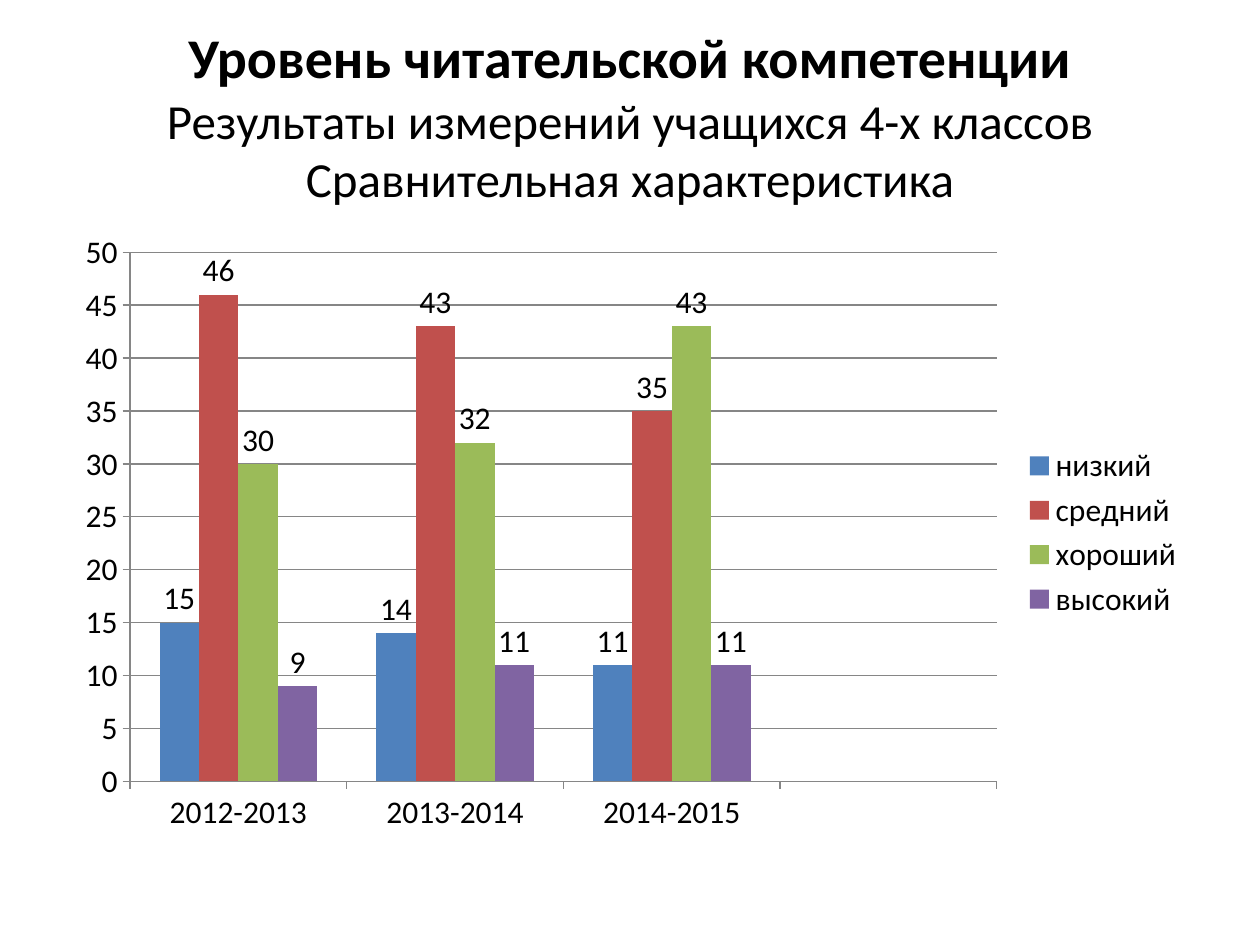
from dataclasses import dataclass

from pptx import Presentation
from pptx.chart.data import CategoryChartData
from pptx.dml.color import RGBColor
from pptx.enum.chart import XL_CHART_TYPE as ChartType
from pptx.enum.chart import XL_LABEL_POSITION as LabelPosition
from pptx.enum.chart import XL_LEGEND_POSITION as LegendPosition
from pptx.enum.chart import XL_TICK_MARK as TickMark
from pptx.enum.text import MSO_ANCHOR as Anchor
from pptx.enum.text import PP_ALIGN as Align
from pptx.util import Cm, Pt


@dataclass(frozen=True)
class Theme:
    """Colours, font and type sizes of the deck."""

    font: str = "Calibri"
    text: RGBColor = RGBColor(0, 0, 0)
    line: RGBColor = RGBColor(0x86, 0x86, 0x86)
    title_size: Pt = Pt(32)
    subtitle_size: Pt = Pt(28)
    chart_size: Pt = Pt(18)


THEME = Theme()
TITLE = "Уровень читательской компетенции"
SUBTITLES = [
    "Результаты измерений учащихся 4-х классов",
    "Сравнительная характеристика",
]
YEARS = ["2012-2013", "2013-2014", "2014-2015", ""]
LEVELS = [
    ("низкий", [15, 14, 11, None], "4F81BD"),
    ("средний", [46, 43, 35, None], "C0504D"),
    ("хороший", [30, 32, 43, None], "9BBB59"),
    ("высокий", [9, 11, 11, None], "8064A2"),
]
SMALL_LABELS = "средний"


def style_font(font, size, bold=False):
    """Apply the theme font and text colour at the given size."""
    font.name = THEME.font
    font.size = size
    font.bold = bold
    font.color.rgb = THEME.text


def add_heading(page, left, top, width, height):
    """Place the bold title and the subtitle lines in the given box."""
    box = page.shapes.add_textbox(left, top, width, height)
    frame = box.text_frame
    frame.word_wrap = True
    frame.vertical_anchor = Anchor.MIDDLE
    para = frame.paragraphs[0]
    para.alignment = Align.CENTER
    span = para.add_run()
    span.text = TITLE
    style_font(span.font, THEME.title_size, bold=True)
    for line in SUBTITLES:
        para.add_line_break()
        span = para.add_run()
        span.text = line
        style_font(span.font, THEME.subtitle_size)


def style_axis(axis):
    """Give an axis its outward ticks and grey line."""
    axis.major_tick_mark = TickMark.OUTSIDE
    axis.minor_tick_mark = TickMark.NONE
    axis.format.line.color.rgb = THEME.line
    axis.format.line.width = Pt(0.75)
    style_font(axis.tick_labels.font, THEME.chart_size)


def label_series(series):
    """Show the values of a series above its columns."""
    if series.name == SMALL_LABELS:
        for index, value in enumerate(series.values):
            if value is not None:
                series.points[index].data_label.position = LabelPosition.OUTSIDE_END
        return
    labels = series.data_labels
    labels.show_value = True
    labels.position = LabelPosition.OUTSIDE_END
    style_font(labels.font, THEME.chart_size)


def add_level_chart(page, left, top, width, height):
    """Place the clustered columns of reading levels in the given box."""
    data = CategoryChartData()
    data.categories = YEARS
    for name, values, _ in LEVELS:
        data.add_series(name, values)
    chart = page.shapes.add_chart(
        ChartType.COLUMN_CLUSTERED, left, top, width, height, data
    ).chart
    style_font(chart.font, THEME.chart_size)
    chart.has_title = False
    chart.has_legend = True
    chart.legend.position = LegendPosition.RIGHT
    chart.legend.include_in_layout = False
    style_font(chart.legend.font, THEME.chart_size)

    style_axis(chart.category_axis)
    axis = chart.value_axis
    style_axis(axis)
    axis.minimum_scale, axis.maximum_scale, axis.major_unit = 0, 50, 5
    grid = axis.major_gridlines.format.line
    grid.color.rgb = THEME.line
    grid.width = Pt(0.75)

    plot = chart.plots[0]
    plot.vary_by_categories = False
    plot.gap_width = 150
    plot.overlap = 0
    for series, (_, _, color) in zip(plot.series, LEVELS):
        series.format.fill.solid()
        series.format.fill.fore_color.rgb = RGBColor.from_string(color)
        label_series(series)


def main():
    """Build the slide and save the deck."""
    deck = Presentation()
    deck.slide_width, deck.slide_height = Cm(25.4), Cm(19.05)
    page = deck.slides.add_slide(deck.slide_layouts[6])
    margin = Cm(1.27)
    width = deck.slide_width - 2 * margin
    add_heading(page, margin, Cm(0.33), width, Cm(3.99))
    add_level_chart(page, margin, Cm(4.45), width, Cm(12.57))
    deck.save("out.pptx")


if __name__ == "__main__":
    main()
